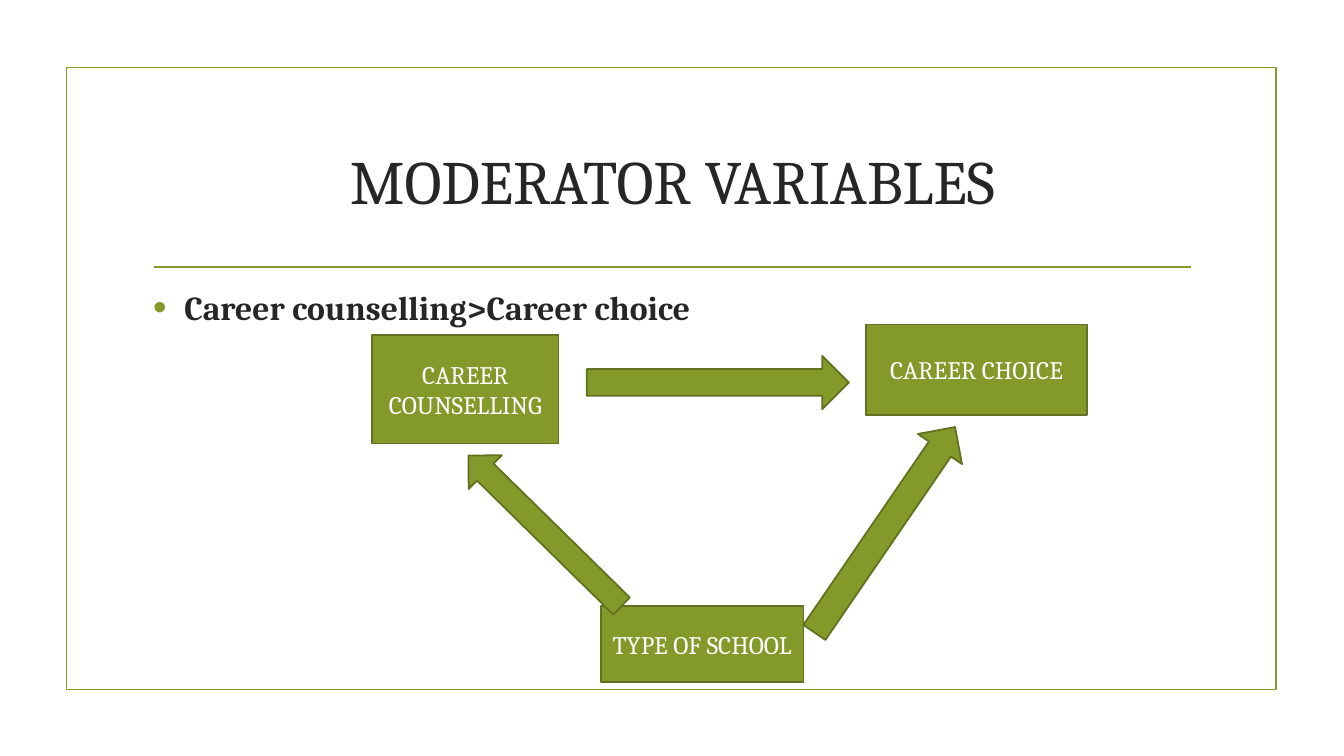
import pptx
import pptx.dml.color
import pptx.enum.shapes
import pptx.enum.text
import pptx.oxml
import pptx.oxml.ns
import pptx.util
import lxml.etree

PX = 9144  # EMU per px, 100 px to the inch
FONT = "Cambria"
COLORS = {"olive": "83992A", "edge": "61711F", "ink": "262626", "white": "FFFFFF"}
SHAPES = pptx.enum.shapes.MSO_SHAPE
ANCHORS = pptx.enum.text.MSO_ANCHOR
ALIGNS = pptx.enum.text.PP_ALIGN

BOXES = [
    ("CAREER COUNSELLING", (369, 332, 185, 108)),
    ("CAREER CHOICE", (859, 322, 219, 90)),
    ("TYPE OF SCHOOL", (596, 601, 201, 76)),
]
ARROWS = [
    ((582, 353, 260, 53), 0),
    ((434, 503, 213, 47), 224.5),
    ((754, 499, 247, 53), 304.4),
]


def px(*lengths):
    return [pptx.util.Emu(length * PX) for length in lengths]


def rgb(name):
    return pptx.dml.color.RGBColor.from_string(COLORS[name])


def set_values(target, values):
    for name, value in values.items():
        setattr(target, name, value)


def write(frame, text, size, color, align, anchor, bold=False):
    set_values(frame, {"word_wrap": True, "vertical_anchor": anchor,
                       "auto_size": pptx.enum.text.MSO_AUTO_SIZE.NONE})
    para = frame.paragraphs[0]
    para.alignment = align
    span = para.add_run()
    span.text = text
    set_values(span.font, {"name": FONT, "size": pptx.util.Pt(size), "bold": bold})
    span.font.color.rgb = rgb(color)
    return para


def set_line(shape, color):
    shape.line.color.rgb = rgb(color)
    shape.line.width = pptx.util.Pt(1.25)


def add_figure(page, kind, area, edge, fill=None, rotation=0):
    shape = page.shapes.add_shape(kind, *px(*area))
    shape.shadow.inherit = False
    shape.rotation = rotation
    if fill:
        shape.fill.solid()
        shape.fill.fore_color.rgb = rgb(fill)
    else:
        shape.fill.background()
    set_line(shape, edge)
    return shape


def add_rule(page, left, right, top):
    rule = page.shapes.add_connector(
        pptx.enum.shapes.MSO_CONNECTOR.STRAIGHT, *px(left, top, right, top))
    set_line(rule, "olive")
    lxml.etree.SubElement(rule._element.spPr, pptx.oxml.ns.qn("a:effectLst"))


def place_title(page, text, area):
    title = page.shapes.title
    set_values(title, dict(zip(("left", "top", "width", "height"), px(*area))))
    write(title.text_frame, text, 44, "ink", ALIGNS.CENTER, ANCHORS.MIDDLE)


def add_bullet(para, indent):
    props = para._p.get_or_add_pPr()
    props.set("marL", str(indent * PX))
    props.set("indent", str(-indent * PX))
    namespace = pptx.oxml.ns.nsdecls("a")
    for markup in (
        f'<a:buClr {namespace}><a:srgbClr val="{COLORS["olive"]}"/></a:buClr>',
        f'<a:buSzPct {namespace} val="115000"/>',
        f'<a:buFont {namespace} typeface="Arial"/>',
        f'<a:buChar {namespace} char="•"/>',
    ):
        props.append(pptx.oxml.parse_xml(markup))


def add_bullet_text(page, text, area):
    box = page.shapes.add_textbox(*px(*area))
    para = write(box.text_frame, text, 24, "ink", ALIGNS.LEFT, ANCHORS.TOP, bold=True)
    para.space_after = pptx.util.Pt(6)
    add_bullet(para, 31)


def add_variable(page, text, area):
    box = add_figure(page, SHAPES.RECTANGLE, area, "edge", "olive")
    write(box.text_frame, text, 18, "white", ALIGNS.CENTER, ANCHORS.MIDDLE)


def main():
    deck = pptx.Presentation()
    deck.slide_width, deck.slide_height = px(1333, 750)
    page = deck.slides.add_slide(deck.slide_layouts.get_by_name("Title Only"))
    add_figure(page, SHAPES.RECTANGLE, (66, 67, 1200, 617), "olive")
    add_rule(page, 153, 1181, 265)
    place_title(page, "MODERATOR VARIABLES", (142, 107, 1050, 143))
    add_bullet_text(page, "Career counselling>Career choice", (142, 280, 1050, 363))
    for text, area in BOXES:
        add_variable(page, text, area)
    for area, rotation in ARROWS:
        add_figure(page, SHAPES.RIGHT_ARROW, area, "edge", "olive", rotation)
    deck.save("out.pptx")


if __name__ == "__main__":
    main()
